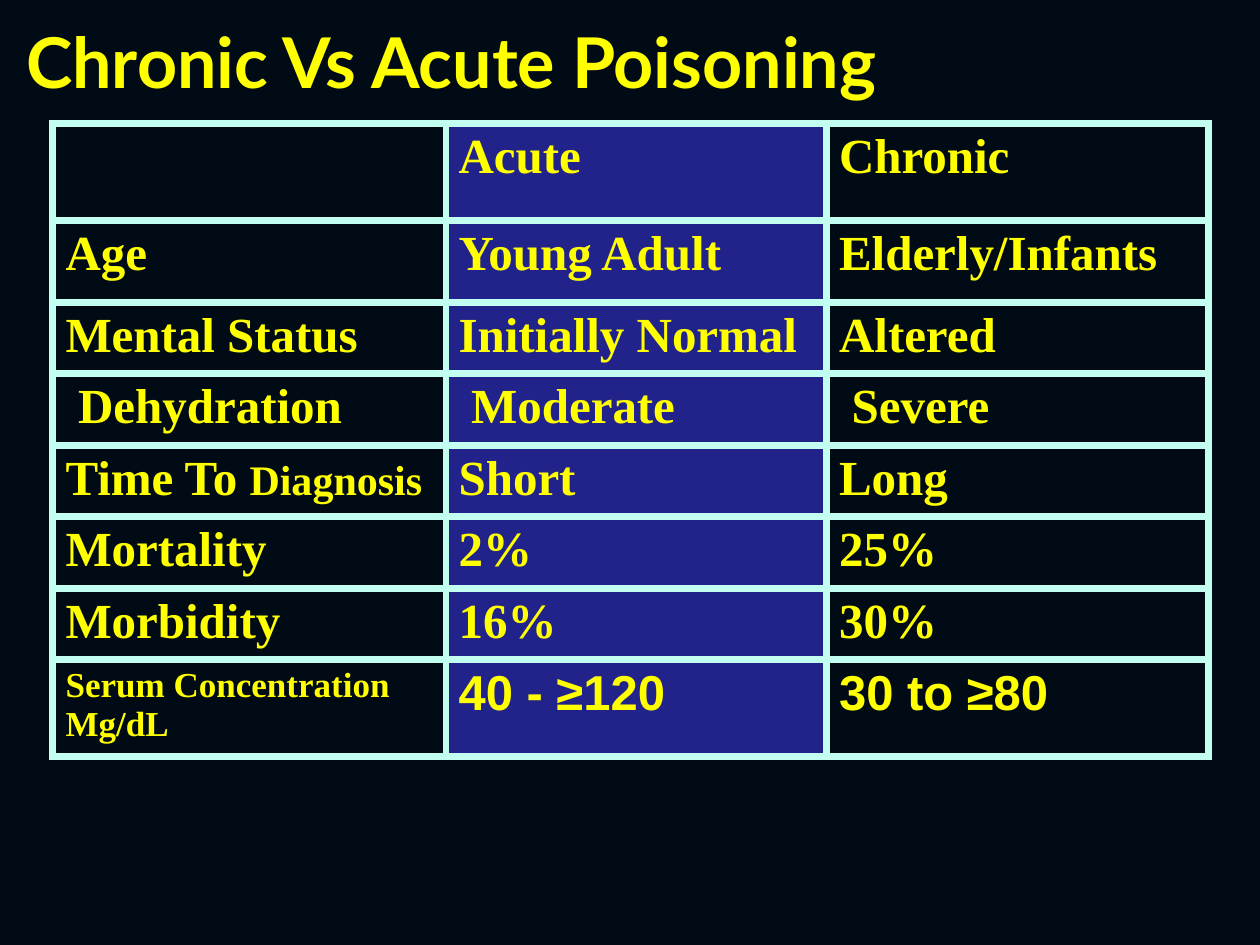
"""Build the slide comparing chronic and acute poisoning in a table."""
from lxml import etree
from pptx import Presentation
from pptx.dml.color import RGBColor
from pptx.enum.text import MSO_ANCHOR
from pptx.oxml import parse_xml
from pptx.util import Inches, Pt

MIDDLE = MSO_ANCHOR.MIDDLE
NS = "http://schemas.openxmlformats.org/drawingml/2006/main"
COLORS = {"bg": "000B16", "text": "FFFF00", "acute": "22228B", "border": "C2FFF0"}
SERIF = "Times New Roman"
COL_WIDTHS = [3.12, 3.02, 3.03]
ROW_HEIGHTS = [0.77, 0.65, 0.52, 0.54, 0.55, 0.52, 0.52, 0.72]
ROWS = [
    ["", "Acute", "Chronic"],
    ["Age", "Young Adult", "Elderly/Infants"],
    ["Mental Status", "Initially Normal", "Altered"],
    ["Dehydration", "Moderate", "Severe"],
    ["Time To ", "Short", "Long"],
    ["Mortality", "2%", "25%"],
    ["Morbidity", "16%", "30%"],
    ["Serum Concentration\nMg/dL", "40 - ≥120", "30 to ≥80"],
]


def set_font(font, name, size):
    font.name, font.size, font.bold = name, Pt(size), True
    font.color.rgb = RGBColor.from_string(COLORS["text"])


def add_borders(cell):
    tcPr = cell._tc.get_or_add_tcPr()
    for i, side in enumerate(("lnL", "lnR", "lnT", "lnB")):
        ln = etree.fromstring(
            f'<a:{side} xmlns:a="{NS}" w="{Pt(4.5)}"><a:solidFill>'
            f'<a:srgbClr val="{COLORS["border"]}"/></a:solidFill></a:{side}>')
        tcPr.insert(i, ln)


prs = Presentation()
prs.slide_width, prs.slide_height = Inches(10), Inches(7.5)
s = prs.slides.add_slide(prs.slide_layouts[6])
s.background.fill.solid()
s.background.fill.fore_color.rgb = RGBColor.from_string(COLORS["bg"])

title = s.shapes.add_textbox(Inches(0), Inches(0.17), Inches(10), Inches(0.62))
tf = title.text_frame
tf.word_wrap = True
tf.vertical_anchor = MIDDLE
tf.margin_left = Inches(0.21)
r = tf.paragraphs[0].add_run()
r.text = "Chronic Vs Acute Poisoning"
set_font(r.font, "Lato", 40)
shadow = parse_xml(
    f'<a:effectLst xmlns:a="{NS}"><a:outerShdw dist="38100" dir="2700000">'
    '<a:srgbClr val="000000"/></a:outerShdw></a:effectLst>')
r._r.get_or_add_rPr().find(f"{{{NS}}}solidFill").addnext(shadow)

table = s.shapes.add_table(len(ROWS), len(COL_WIDTHS), Inches(0.42), Inches(0.98),
                           Inches(sum(COL_WIDTHS)), Inches(sum(ROW_HEIGHTS))).table
for column, width in zip(table.columns, COL_WIDTHS):
    column.width = Inches(width)
for i, (labels, height) in enumerate(zip(ROWS, ROW_HEIGHTS)):
    table.rows[i].height = Inches(height)
    last = i == len(ROWS) - 1
    for j, label in enumerate(labels):
        cell = table.cell(i, j)
        cell.text = label
        cell.margin_left = Inches(0.2 if label in ("Dehydration", "Moderate", "Severe") else 0.1)
        cell.fill.solid()
        cell.fill.fore_color.rgb = RGBColor.from_string(COLORS["acute" if j == 1 else "bg"])
        add_borders(cell)
        for p in cell.text_frame.paragraphs:
            set_font(p.font, "Arial" if last and j else SERIF, 20 if last and not j else 28)
        if label == "Time To ":
            r = p.add_run()
            r.text = "Diagnosis"
            r.font.size = Pt(24)

prs.save("out.pptx")
